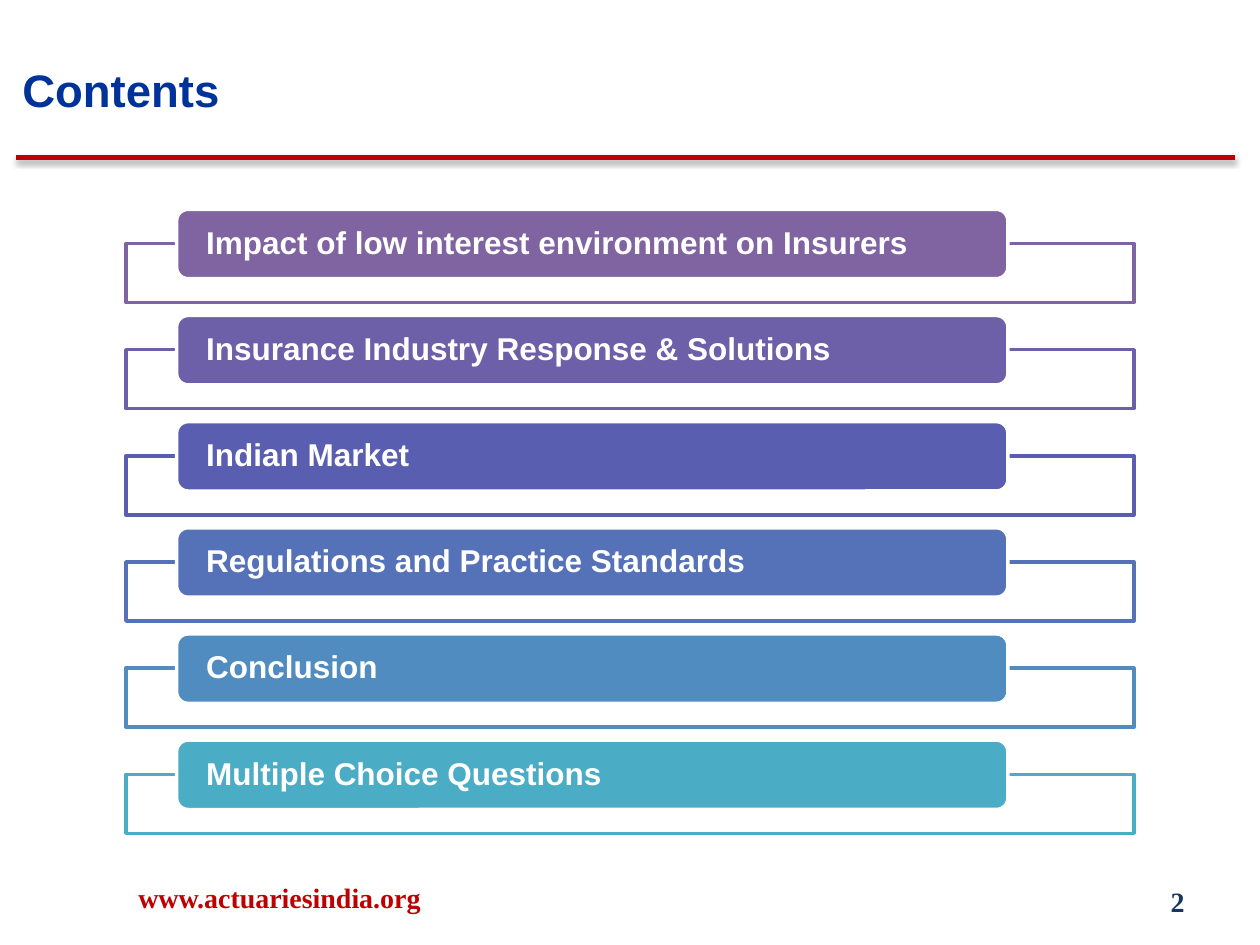
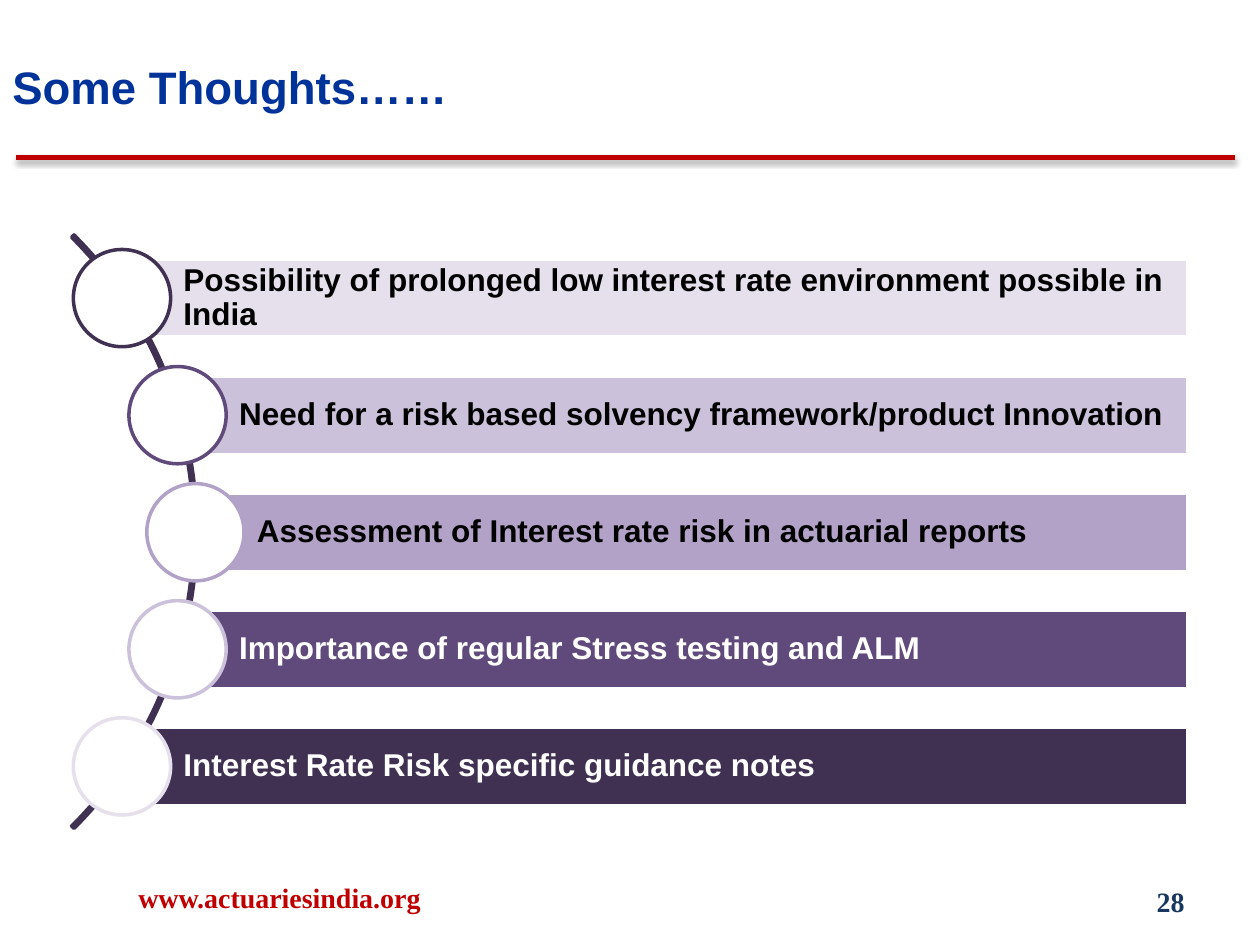
from lxml import etree
from pptx import Presentation
from pptx.dml.color import RGBColor
from pptx.enum.shapes import MSO_CONNECTOR, MSO_SHAPE
from pptx.enum.text import MSO_ANCHOR, PP_ALIGN
from pptx.oxml.ns import qn
from pptx.util import Cm, Pt

LINE = MSO_CONNECTOR.STRAIGHT
RECT = MSO_SHAPE.RECTANGLE
ROUND = MSO_SHAPE.ROUNDED_RECTANGLE
OVAL = MSO_SHAPE.OVAL
ARC = MSO_SHAPE.BLOCK_ARC
TOP, MIDDLE = MSO_ANCHOR.TOP, MSO_ANCHOR.MIDDLE
LEFT, RIGHT = PP_ALIGN.LEFT, PP_ALIGN.RIGHT

WHITE = RGBColor(0xFF, 0xFF, 0xFF)
BLACK = RGBColor(0x00, 0x00, 0x00)
RED = RGBColor(0xC0, 0x00, 0x00)
BLUE = RGBColor(0x00, 0x33, 0x99)
NAVY = RGBColor(0x17, 0x37, 0x5E)
PLUM = RGBColor(0x40, 0x31, 0x52)
GRAPE = RGBColor(0x60, 0x4A, 0x7B)
MAUVE = RGBColor(0xB3, 0xA2, 0xC7)
LILAC = RGBColor(0xCC, 0xC1, 0xDA)
PALE = RGBColor(0xE6, 0xE0, 0xEC)

SANS, SERIF = "Arial", "Times New Roman"
SITE = "www.actuariesindia.org"

TOPICS = [
    ("Impact of low interest environment on Insurers", RGBColor(0x80, 0x64, 0xA2)),
    ("Insurance Industry Response & Solutions", RGBColor(0x6E, 0x5F, 0xA9)),
    ("Indian Market", RGBColor(0x5A, 0x5E, 0xB1)),
    ("Regulations and Practice Standards", RGBColor(0x55, 0x72, 0xB8)),
    ("Conclusion", RGBColor(0x50, 0x8C, 0xBF)),
    ("Multiple Choice Questions", RGBColor(0x4B, 0xAC, 0xC6)),
]

THOUGHTS = [
    ("Possibility of prolonged low interest rate environment possible in India",
     2.46, PALE, PLUM, BLACK),
    ("Need for a risk based solvency framework/product Innovation",
     3.58, LILAC, GRAPE, BLACK),
    ("Assessment of Interest rate risk in actuarial reports",
     3.94, MAUVE, MAUVE, BLACK),
    ("Importance of regular Stress testing and ALM",
     3.58, GRAPE, LILAC, WHITE),
    ("Interest Rate Risk specific guidance notes",
     2.46, PLUM, PALE, WHITE),
]


def write(shape, text, size=18, font=SANS, color=WHITE, align=LEFT,
          anchor=MIDDLE, pad=(0.25, 0.13, 0.25, 0.13), pitch=None):
    frame = shape.text_frame
    frame.word_wrap = True
    frame.vertical_anchor = anchor
    (frame.margin_left, frame.margin_top,
     frame.margin_right, frame.margin_bottom) = map(Cm, pad)
    para = frame.paragraphs[0]
    para.alignment = align
    if pitch:
        para.line_spacing = pitch
    run = para.add_run()
    run.text = text
    run.font.name = font
    run.font.size = Pt(size)
    run.font.bold = True
    run.font.color.rgb = color


def label(slide, box, text, **style):
    write(slide.shapes.add_textbox(*map(Cm, box)), text, **style)


def block(slide, kind, box, fill, edge):
    shape = slide.shapes.add_shape(kind, *map(Cm, box))
    shape.shadow.inherit = False
    if fill is None:
        shape.fill.background()
    else:
        shape.fill.solid()
        shape.fill.fore_color.rgb = fill
    shape.line.color.rgb = edge
    shape.line.width = Pt(2)
    return shape


def rule(slide):
    line = slide.shapes.add_connector(LINE, Cm(0.33), Cm(3.18), Cm(24.89), Cm(3.18))
    line.line.color.rgb = RED
    line.line.width = Pt(3)
    props = line._element.spPr
    effect = etree.SubElement(props, qn("a:effectLst"))
    shade = etree.SubElement(effect, qn("a:outerShdw"), blurRad="40000",
                             dist="20000", dir="5400000", rotWithShape="0")
    tint = etree.SubElement(shade, qn("a:srgbClr"), val="000000")
    etree.SubElement(tint, qn("a:alpha"), val="38000")


def page(deck, title, left, top, number):
    slide = deck.slides.add_slide(deck.slide_layouts[6])
    rule(slide)
    label(slide, (left, top, 12.07, 1.7), title, size=26, color=BLUE, anchor=TOP)
    label(slide, (2.54, 17.58, 8.05, 1.02), SITE, size=16, font=SERIF, color=RED)
    label(slide, (18.21, 17.65, 5.92, 1.02), number, size=16, font=SERIF,
          color=NAVY, align=RIGHT)
    return slide


def topic(slide, row, text, color):
    top = 4.22 + row * 2.14
    block(slide, RECT, (2.54, top + 0.69, 20.32, 1.19), WHITE, color)
    tab = block(slide, ROUND, (3.56, top, 16.76, 1.4), color, WHITE)
    write(tab, text, pad=(0.53, 0, 0.53, 0), pitch=0.9)


def thought(slide, row, text, mid, fill, ring, ink):
    top = 5.23 + row * 2.36
    bar = block(slide, RECT, (mid, top, 23.95 - mid, 1.57), fill, WHITE)
    write(bar, text, color=ink, pad=(1.24, 0.13, 0.13, 0.13), pitch=0.9)
    block(slide, OVAL, (mid - 0.98, top - 0.2, 1.96, 1.96), WHITE, ring)


def main():
    deck = Presentation()
    deck.slide_width, deck.slide_height = Cm(25.4), Cm(19.05)

    slide = page(deck, "Contents", 0.2, 1.12, "2")
    for row, item in enumerate(TOPICS):
        topic(slide, row, *item)

    slide = page(deck, "Some Thoughts……", 0, 1.07, "28")
    curve = block(slide, ARC, (-12.95, 2.26, 16.92, 16.92), None, PLUM)
    for spot, value in enumerate((189, 27, 0.004)):
        curve.adjustments[spot] = value
    for row, item in enumerate(THOUGHTS):
        thought(slide, row, *item)

    deck.save("out.pptx")


if __name__ == "__main__":
    main()
